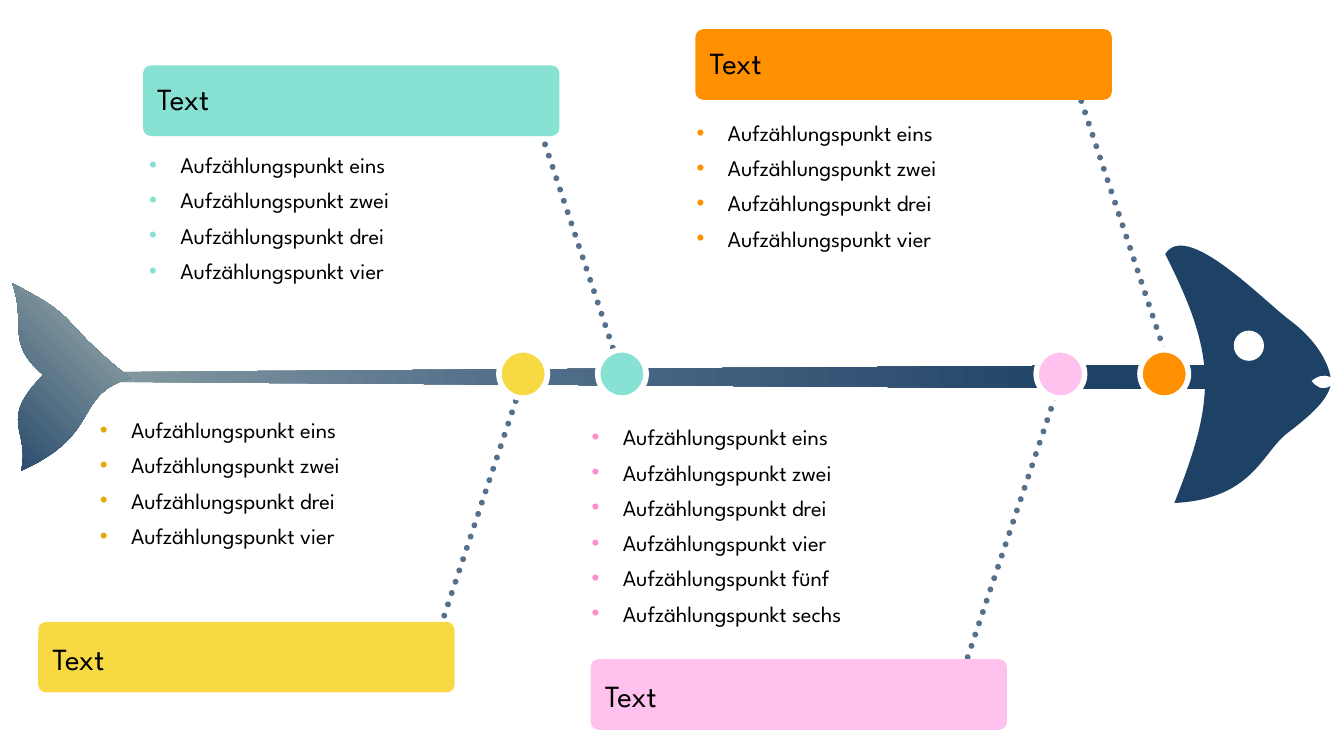
from math import cos, radians, sin

from lxml import etree
from pptx import Presentation
from pptx.dml.color import RGBColor
from pptx.enum.dml import MSO_LINE
from pptx.enum.shapes import MSO_CONNECTOR, MSO_SHAPE
from pptx.enum.text import MSO_ANCHOR, MSO_AUTO_SIZE
from pptx.oxml.ns import qn
from pptx.util import Pt

PX = 9144
FONT = "League Spartan"
STRAIGHT = MSO_CONNECTOR.STRAIGHT
OVAL, ROUND = MSO_SHAPE.OVAL, MSO_SHAPE.ROUNDED_RECTANGLE
DOTS = MSO_LINE.ROUND_DOT
TOP, MIDDLE = MSO_ANCHOR.TOP, MSO_ANCHOR.MIDDLE
GROW = MSO_AUTO_SIZE.SHAPE_TO_FIT_TEXT

HEX = {
    "black": "000000", "white": "FFFFFF", "navy": "1E4266",
    "slate": "54708B", "grey": "8499A0", "mint": "87E2D3",
    "yellow": "F7D944", "orange": "FF9002", "pink": "FFC1ED",
    "gold": "E5A90B", "rose": "FF8DCB",
}
COUNTS = ["eins", "zwei", "drei", "vier", "fünf", "sechs"]

SPINE = [(101, 374), (102, 372, 112, 369, 119, 369), (1199, 362),
         (1206, 362, 1211, 368, 1211, 374), (1211, 374),
         (1211, 381, 1206, 386, 1199, 386),
         (115, 379), (108, 379, 101, 376, 101, 374)]
HEAD = [(1301, 378), (1305, 383, 1311, 388, 1320, 383),
        (1316, 397, 1303, 410, 1278, 429), (1252, 448, 1244, 495, 1165, 499),
        (1207, 394, 1207, 353, 1156, 252), (1177, 218, 1252, 297, 1280, 318),
        (1307, 338, 1318, 361, 1320, 374), (1312, 371, 1307, 373, 1301, 378)]
TAIL = [(129, 375), (71, 393, 103, 430, 21, 467), (30, 425, -3, 418, 43, 372),
        (4, 339, 27, 321, 12, 281), (84, 318, 53, 314, 129, 375)]

BONES = [
    ("mint", "mint", (142, 65), 79, 593, (537, 132, 617, 372),
     (138, 145, 420, 143), 4),
    ("yellow", "gold", (38, 617), 634, 495, (437, 622, 517, 382),
     (89, 408, 420, 143), 4),
    ("orange", "orange", (690, 29), 43, 1131, (1069, 89, 1160, 363),
     (681, 113, 420, 143), 4),
    ("pink", "rose", (586, 654), 671, 1028, (960, 652, 1049, 387),
     (577, 415, 420, 214), 6),
]


def emu(*vals):
    """Turn px lengths into EMU."""
    return [round(v * PX) for v in vals]


def rgb(name):
    """Look up a colour by name."""
    return RGBColor.from_string(HEX[name])


def apply(item, style):
    """Set each attribute in style on item."""
    for key, val in style.items():
        setattr(item, key, val)


def place(item, area):
    """Move and size an item."""
    apply(item, dict(zip(("left", "top", "width", "height"), emu(*area))))


def paint(shape, fill, edge=None):
    """Give a shape a flat fill and a line of 4 points or none."""
    shape.shadow.inherit = False
    shape.fill.solid()
    shape.fill.fore_color.rgb = rgb(fill)
    if edge:
        shape.line.color.rgb = rgb(edge)
        shape.line.width = Pt(4)
    else:
        shape.line.fill.background()


def shade(shape, stops, angle):
    """Swap the flat fill for a linear gradient."""
    flat = shape._element.spPr.find(qn("a:solidFill"))
    grad = etree.Element(qn("a:gradFill"), rotWithShape="1")
    row = etree.SubElement(grad, qn("a:gsLst"))
    for pos, name in stops:
        stop = etree.SubElement(row, qn("a:gs"), pos=str(pos * 1000))
        etree.SubElement(stop, qn("a:srgbClr"), val=HEX[name])
    etree.SubElement(grad, qn("a:lin"), ang=str(angle * 60000), scaled="0")
    flat.getparent().replace(flat, grad)


def local(x, y, area, turn):
    """Turn a slide point into one inside a rotated box."""
    left, top, wide, high = area
    dx, dy = x - left - wide / 2, y - top - high / 2
    c, s = cos(radians(turn)), sin(radians(turn))
    return emu(dx * c + dy * s + wide / 2, dy * c - dx * s + high / 2)


def outline(shapes, segs, area, fill, turn=0):
    """Draw a closed outline of straight and curved parts."""
    pen = shapes.build_freeform(*emu(*area[:2]))
    pen.add_line_segments([emu(*seg[-2:]) for seg in segs], close=True)
    shape = pen.convert_to_shape()
    place(shape, area)
    shape.rotation = turn
    track = shape._element.spPr.find(".//" + qn("a:path"))
    for old in list(track):
        track.remove(old)
    for key, val in zip("wh", emu(*area[2:])):
        track.set(key, str(val))
    for i, seg in enumerate(segs):
        tag = "cubicBezTo" if len(seg) > 2 else "lnTo" if i else "moveTo"
        step = etree.SubElement(track, qn("a:" + tag))
        for x, y in zip(seg[::2], seg[1::2]):
            px, py = local(x, y, area, turn)
            etree.SubElement(step, qn("a:pt"), x=str(px), y=str(py))
    etree.SubElement(track, qn("a:close"))
    paint(shape, fill)
    return shape


def disc(shapes, left, top, size, fill, edge=None):
    """Draw a circle."""
    shape = shapes.add_shape(OVAL, *emu(left, top, size, size))
    paint(shape, fill, edge)


def bone(shapes, ends):
    """Draw a dotted bone."""
    link = shapes.add_connector(STRAIGHT, *emu(*ends))
    link.line.color.rgb = rgb("slate")
    apply(link.line, {"width": Pt(4.25), "dash_style": DOTS})
    props = link._element.spPr
    props.find(qn("a:ln")).set("cap", "rnd")
    etree.SubElement(props, qn("a:effectLst"))


def write(para, text, size):
    """Put one run of text in a paragraph."""
    run = para.add_run()
    run.text = text
    apply(run.font, {"name": FONT, "size": Pt(size), "bold": False})
    run.font.color.rgb = rgb("black")


def label(shapes, spot, top, fill):
    """Draw a coloured box with its heading."""
    left, high = spot
    box = shapes.add_shape(ROUND, *emu(left, high, 413, 70))
    box.adjustments[0] = 0.11
    paint(box, fill)
    frame = shapes.add_textbox(*emu(left + 14, top, 394, 37)).text_frame
    apply(frame, {"margin_left": 0, "margin_right": 0, "margin_top": 0,
                  "margin_bottom": 0, "word_wrap": True,
                  "vertical_anchor": MIDDLE, "auto_size": GROW})
    write(frame.paragraphs[0], "Text", 22)


def bullet(para, color):
    """Give a paragraph a coloured bullet and hanging indent."""
    props = para._p.get_or_add_pPr()
    props.set("marL", str(31 * PX))
    props.set("indent", str(-31 * PX))
    tint = etree.SubElement(props, qn("a:buClr"))
    etree.SubElement(tint, qn("a:srgbClr"), val=HEX[color])
    etree.SubElement(props, qn("a:buFont"), typeface="Arial")
    etree.SubElement(props, qn("a:buChar"), char="•")


def points(holder, area, color, count):
    """Bring a body placeholder to the front and fill its list."""
    place(holder, area)
    holder._element.getparent().append(holder._element)
    frame = holder.text_frame
    apply(frame, {"word_wrap": True, "vertical_anchor": TOP,
                  "auto_size": GROW})
    for i, word in enumerate(COUNTS[:count]):
        para = frame.add_paragraph() if i else frame.paragraphs[0]
        bullet(para, color)
        apply(para, {"space_before": Pt(0), "space_after": Pt(6)})
        write(para, f"Aufzählungspunkt {word}", 16)


def main():
    """Build the fishbone slide."""
    deck = Presentation()
    deck.slide_width, deck.slide_height = emu(1333.33, 750)
    slide = deck.slides.add_slide(deck.slide_layouts[4])
    shapes = slide.shapes
    title, *bodies = list(slide.placeholders)
    title._element.getparent().remove(title._element)
    for row in BONES:
        bone(shapes, row[5])
    spine = outline(shapes, SPINE, (101, 362, 1110, 24), "slate")
    shade(spine, [(0, "grey"), (35, "slate"), (89, "navy")], 0)
    face = shapes.add_group_shape().shapes
    outline(face, HEAD, (1080, 267, 215, 211), "navy", 225)
    disc(face, 1224, 328, 30, "white")
    tail = outline(shapes, TAIL, (-49, 302, 150, 142), "navy", 225)
    shade(tail, [(18, "navy"), (79, "grey")], 90)
    for fill, _, spot, top, *_ in BONES:
        label(shapes, spot, top, fill)
    for row in BONES:
        disc(shapes, row[4], 347, 48, row[0], "white")
    for body, row in zip(bodies, BONES):
        points(body, row[6], row[1], row[7])
    deck.save("out.pptx")


if __name__ == "__main__":
    main()
